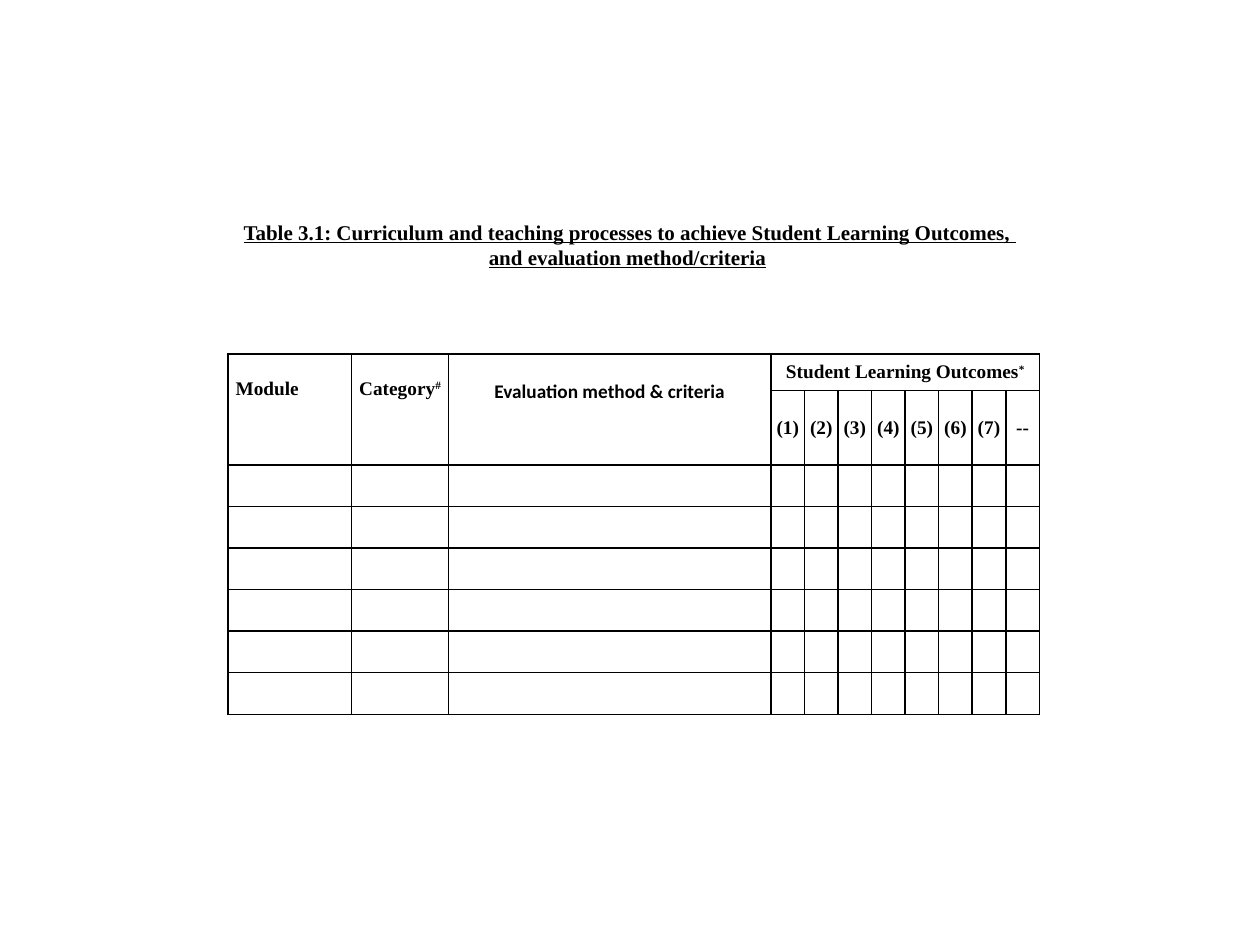
from dataclasses import dataclass

from lxml.etree import SubElement
from pptx import Presentation
from pptx.dml.color import RGBColor
from pptx.enum.text import MSO_ANCHOR as Anchor, MSO_AUTO_SIZE as AutoSize, PP_ALIGN as Align
from pptx.oxml.ns import qn
from pptx.table import Table, _Cell as Cell
from pptx.util import Inches, Pt

SERIF = "Times New Roman"
SANS = "Calibri"
BLACK = "000000"
TABLE_WIDTH = 6.44
LEAD_WIDTHS = [0.98, 0.77, 2.56]
OUTCOMES = ["(1)", "(2)", "(3)", "(4)", "(5)", "(6)", "(7)", "--"]
HEADER_HEIGHTS = [0.29, 0.59]
BODY_ROWS = 6
BODY_HEIGHT = 0.33
TITLE_LINES = [
    "Table 3.1: Curriculum and teaching processes to achieve Student Learning Outcomes, ",
    "and evaluation method/criteria",
]


@dataclass
class Heading:
    row: int
    column: int
    text: str
    mark: str = ""
    font: str = SERIF
    align: Align = Align.CENTER
    anchor: Anchor = Anchor.MIDDLE
    side: float = 0.02
    top: float = 0.02
    rows: int = 1
    columns: int = 1


HEADINGS = [
    Heading(0, 0, "Module", align=Align.LEFT, anchor=Anchor.TOP, side=0.06, top=0.19, rows=2),
    Heading(0, 1, "Category", mark="#", anchor=Anchor.TOP, side=0.06, top=0.19, rows=2),
    Heading(0, 2, "Evaluation method & criteria", font=SANS, anchor=Anchor.TOP,
            side=0.06, top=0.21, rows=2),
    Heading(0, 3, "Student Learning Outcomes", mark="*", columns=len(OUTCOMES)),
] + [Heading(1, 3 + index, text) for index, text in enumerate(OUTCOMES)]


def format_run(run, size: float, font: str = SERIF, underline: bool = False) -> None:
    run.font.name = font
    run.font.size = Pt(size)
    run.font.bold = True
    run.font.underline = underline
    run.font.color.rgb = RGBColor.from_string(BLACK)


def format_cell(cell: Cell) -> None:
    properties = cell._tc.get_or_add_tcPr()
    for side in ("a:lnL", "a:lnR", "a:lnT", "a:lnB"):
        line = SubElement(properties, qn(side), w=str(Pt(1)))
        fill = SubElement(line, qn("a:solidFill"))
        SubElement(fill, qn("a:srgbClr"), val=BLACK)
    cell.fill.background()
    SubElement(cell.text_frame.paragraphs[0]._p, qn("a:endParaRPr"), sz="1100")


def fill_heading(table: Table, heading: Heading) -> None:
    cell = table.cell(heading.row, heading.column)
    if heading.rows > 1 or heading.columns > 1:
        cell.merge(table.cell(heading.row + heading.rows - 1,
                              heading.column + heading.columns - 1))
    cell.margin_left = cell.margin_right = Inches(heading.side)
    cell.margin_top = Inches(heading.top)
    cell.margin_bottom = Inches(0.02)
    cell.vertical_anchor = heading.anchor
    paragraph = cell.text_frame.paragraphs[0]
    paragraph.text = heading.text
    paragraph.alignment = heading.align
    format_run(paragraph.runs[0], 11, heading.font)
    if heading.mark:
        mark = paragraph.add_run()
        mark.text = heading.mark
        format_run(mark, 11, heading.font)
        mark.font._element.set("baseline", "30000")


def add_outcomes_table(slide) -> None:
    heights = HEADER_HEIGHTS + [BODY_HEIGHT] * BODY_ROWS
    outcome_width = (TABLE_WIDTH - sum(LEAD_WIDTHS)) / len(OUTCOMES)
    widths = LEAD_WIDTHS + [outcome_width] * len(OUTCOMES)
    table = slide.shapes.add_table(
        len(heights), len(widths), Inches(1.81), Inches(2.81),
        Inches(TABLE_WIDTH), Inches(sum(heights))).table
    table.first_row = False
    table.horz_banding = False
    for column, width in zip(table.columns, widths):
        column.width = Inches(width)
    for row, height in zip(table.rows, heights):
        row.height = Inches(height)
    for cell in table.iter_cells():
        format_cell(cell)
    for heading in HEADINGS:
        fill_heading(table, heading)


def add_title(slide) -> None:
    title = slide.shapes.title
    title.left, title.top = Inches(1.83), Inches(1.69)
    title.width, title.height = Inches(6.34), Inches(0.5)
    frame = title.text_frame
    frame.text = "\n".join(TITLE_LINES)
    frame.word_wrap = False
    frame.auto_size = AutoSize.SHAPE_TO_FIT_TEXT
    frame.vertical_anchor = Anchor.MIDDLE
    for paragraph in frame.paragraphs:
        paragraph.alignment = Align.CENTER
        format_run(paragraph.runs[0], 12, underline=True)
    space = frame.paragraphs[-1].add_run()
    space.text = " "
    format_run(space, 12, SANS)


def main() -> None:
    presentation = Presentation()
    presentation.slide_width = Inches(10)
    presentation.slide_height = Inches(7.5)
    slide = presentation.slides.add_slide(presentation.slide_layouts[5])
    add_outcomes_table(slide)
    add_title(slide)
    presentation.save("out.pptx")


if __name__ == "__main__":
    main()
